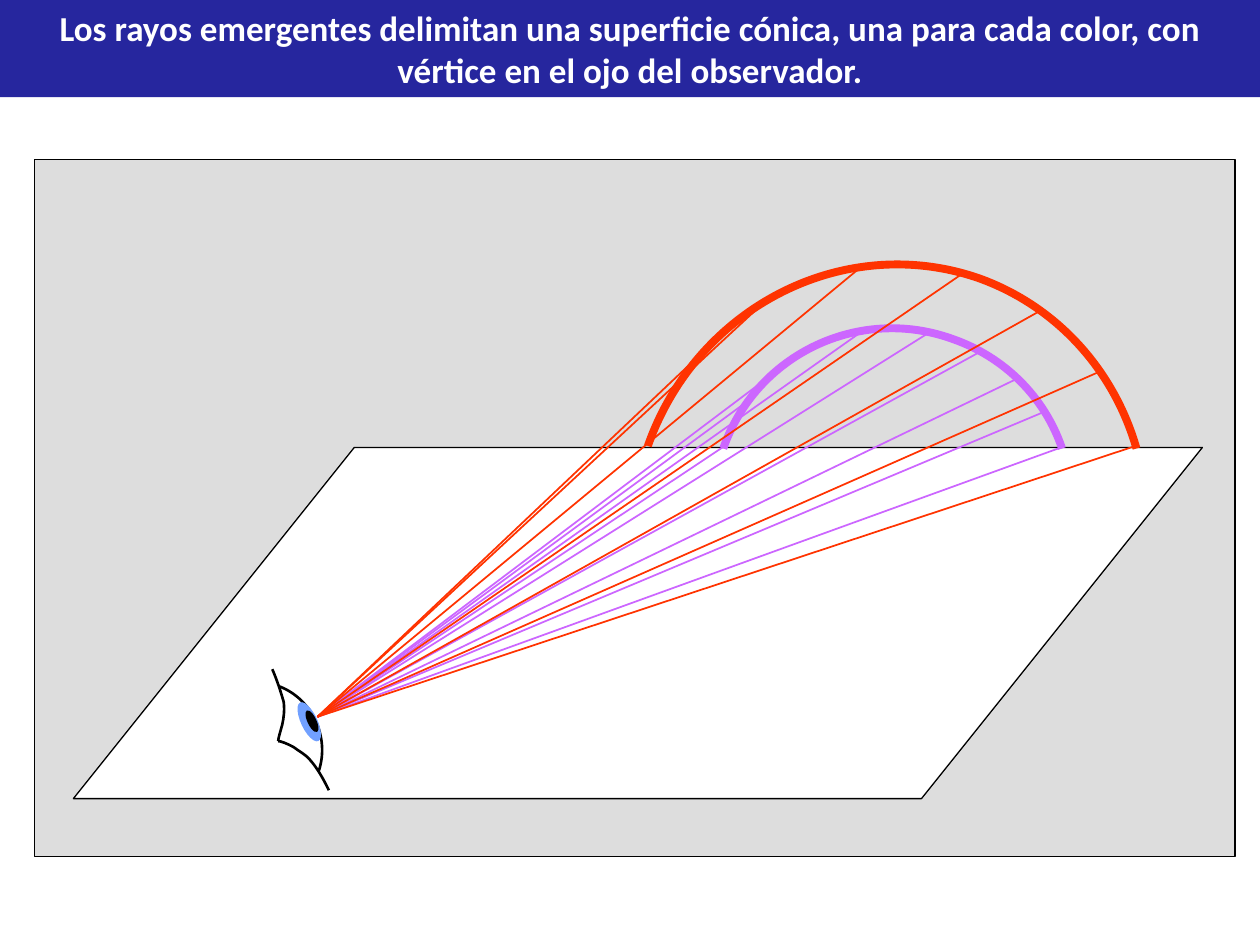
from math import cos, radians, sin

from lxml.etree import SubElement
from pptx import Presentation
from pptx.dml.color import RGBColor
from pptx.enum.shapes import MSO_CONNECTOR, MSO_SHAPE
from pptx.enum.text import MSO_ANCHOR, MSO_AUTO_SIZE, PP_ALIGN
from pptx.oxml.ns import qn
from pptx.util import Cm, Pt

NAVY = RGBColor(0x26, 0x26, 0x9E)
GREY = RGBColor(0xDD, 0xDD, 0xDD)
WHITE = RGBColor(0xFF, 0xFF, 0xFF)
BLACK = RGBColor(0, 0, 0)
VIOLET = RGBColor(0xCC, 0x66, 0xFF)
RED = RGBColor(0xFF, 0x33, 0x00)
IRIS = RGBColor(0x71, 0xA0, 0xFF)

TITLE = ("Los rayos emergentes delimitan una superficie cónica, una para cada "
         "color, con vértice en el ojo del observador.")

EYE = (6.4, 14.45)
EYE_TILT = 334.7
ARC_TILT = 199.6
VIOLET_ENDS = [(14.61, 8.99), (15.19, 8), (16.08, 7.16), (17.42, 6.65), (18.72, 6.71),
               (19.76, 7.09), (20.47, 7.65), (21.03, 8.31), (21.39, 9.02)]
RED_ENDS = [(14.1, 7.16), (15.57, 5.94), (17.42, 5.33), (19.41, 5.51),
            (20.96, 6.27), (22.17, 7.49), (22.89, 8.99)]
VIOLET_ARC = [(21.41, 9.04), (21.06, 8), (20.24, 7.19), (19.2, 6.83),
              (17.32, 6.15), (15.24, 7.14), (14.58, 9.04)]
RED_ARC = [(22.91, 9.04), (22.45, 7.44), (21.29, 6.17), (19.74, 5.61),
           (17.04, 4.67), (14.05, 6.17), (13.06, 8.99)]
EYE_WHITE = [(5.64, 13.87), (5.9, 13.95), (6.05, 14.05), (6.1, 14.15),
             (5.9, 14.3), (6.1, 14.9), (6.43, 14.94),
             (6.5, 14.8), (6.5, 15.2), (6.43, 15.49),
             (6.2, 15.15), (5.9, 14.98), (5.64, 14.91),
             (5.75, 14.6), (5.78, 14.2), (5.64, 13.87)]
UPPER_LID = [(5.49, 13.49), (5.59, 13.72), (5.66, 13.94), (5.72, 14.15), (5.74, 14.33),
             (5.72, 14.48), (5.69, 14.61), (5.66, 14.73), (5.61, 14.88), (5.61, 14.94)]
CORNEA = [(5.64, 13.84), (6.3, 14.1), (6.65, 14.86), (6.43, 15.54)]
LOWER_LID = [(6.63, 15.93), (6.53, 15.72), (6.4, 15.49), (6.27, 15.34), (6.17, 15.21),
             (6.02, 15.14), (5.92, 15.06), (5.79, 14.99), (5.66, 14.94), (5.61, 14.94)]


def set_all(obj, values):
    for name, value in values.items():
        setattr(obj, name, value)


def place(sp, box):
    set_all(sp, dict(zip(("left", "top", "width", "height"), map(Cm, box))))


def unrotate(point, box, rotation):
    left, top, width, height = box
    cx, cy = left + width / 2, top + height / 2
    dx, dy = point[0] - cx, point[1] - cy
    c, s = cos(radians(rotation)), sin(radians(rotation))
    return Cm(cx + c * dx + s * dy), Cm(cy - s * dx + c * dy)


class Sketch:
    title_font = {"name": "Calibri", "size": Pt(20), "bold": True}
    title_frame = {"word_wrap": True, "auto_size": MSO_AUTO_SIZE.NONE,
                   "vertical_anchor": MSO_ANCHOR.MIDDLE}

    def __init__(self, s):
        self.s = s
        self.shapes = s.shapes

    def start_group(self):
        self.shapes = self.s.shapes.add_group_shape().shapes

    def end_group(self):
        self.shapes = self.s.shapes

    def paint(self, sp, fill=None, line=None, width=0.75):
        sp.shadow.inherit = False
        for fmt, color in ((sp.fill, fill), (sp.line.fill, line)):
            if color is None:
                fmt.background()
            else:
                fmt.solid()
                fmt.fore_color.rgb = color
        if line is not None:
            sp.line.width = Pt(width)

    def title(self, text, box):
        sp = self.s.shapes.title
        place(sp, box)
        self.paint(sp, NAVY)
        tf = sp.text_frame
        set_all(tf, self.title_frame)
        p = tf.paragraphs[0]
        p.alignment = PP_ALIGN.CENTER
        r = p.add_run()
        r.text = text
        set_all(r.font, self.title_font)
        r.font.color.rgb = WHITE

    def shape(self, kind, box, fill, line=None, rotation=0):
        sp = self.shapes.add_shape(kind, *map(Cm, box))
        sp.rotation = rotation
        self.paint(sp, fill, line)
        return sp

    def ray(self, start, end, color):
        cx = self.shapes.add_connector(MSO_CONNECTOR.STRAIGHT, *map(Cm, start + end))
        cx.line.color.rgb = color
        cx.line.width = Pt(1)
        SubElement(cx._element.spPr, qn("a:effectLst"))

    def curve(self, controls, box, rotation, close=False, **paint):
        first, *rest = [unrotate(point, box, rotation) for point in controls]
        builder = self.shapes.build_freeform(*first)
        builder.add_line_segments(rest, close=close)
        sp = builder.convert_to_shape()
        shift = {"x": sp.left - Cm(box[0]), "y": sp.top - Cm(box[1])}
        place(sp, box)
        sp.rotation = rotation
        track = next(sp._element.iter(qn("a:path")))
        for name, size in (("w", sp.width), ("h", sp.height)):
            track.set(name, str(size))
        for pt in track.iter(qn("a:pt")):
            for axis, offset in shift.items():
                pt.set(axis, str(int(pt.get(axis)) + offset))
        lines = track.findall(qn("a:lnTo"))
        for i in range(0, len(lines), 3):
            bezier = lines[i].makeelement(qn("a:cubicBezTo"))
            lines[i].addprevious(bezier)
            for line in lines[i:i + 3]:
                bezier.append(line[0])
                track.remove(line)
        self.paint(sp, **paint)

    def cone(self, ends, arc, box, color):
        self.start_group()
        for end in ends:
            self.ray(EYE, end, color)
        self.end_group()
        self.curve(arc, box, ARC_TILT, line=color, width=4.5)

    def eye(self):
        stroke = {"line": BLACK, "width": 1.5}
        self.start_group()
        self.curve(EYE_WHITE, (5.05, 14.33, 1.83, 0.81), 64.7, close=True, fill=WHITE)
        self.curve(UPPER_LID, (5.28, 13.54, 0.51, 1.35), EYE_TILT, **stroke)
        self.curve(CORNEA, (5.36, 14.02, 1.32, 1.35), 20.5, **stroke)
        self.shape(MSO_SHAPE.OVAL, (6.07, 14.12, 0.33, 0.86), IRIS, rotation=EYE_TILT)
        self.shape(MSO_SHAPE.OVAL, (6.2, 14.3, 0.18, 0.48), BLACK, rotation=EYE_TILT)
        self.curve(LOWER_LID, (5.87, 14.76, 0.51, 1.35), EYE_TILT, **stroke)
        self.end_group()


def main():
    prs = Presentation()
    set_all(prs, {"slide_width": Cm(25.4), "slide_height": Cm(19.05)})
    sketch = Sketch(prs.slides.add_slide(prs.slide_layouts[5]))
    sketch.title(TITLE, (0, 0, 25.4, 1.96))
    sketch.shape(MSO_SHAPE.RECTANGLE, (0.69, 3.22, 24.21, 14.05), GREY, BLACK)
    ground = sketch.shape(MSO_SHAPE.PARALLELOGRAM, (1.48, 9.02, 22.76, 7.08), WHITE, BLACK)
    ground.adjustments[0] = 0.8
    sketch.cone(VIOLET_ENDS, VIOLET_ARC, (14.99, 6.58, 6.45, 3.63), VIOLET)
    sketch.cone(RED_ENDS, RED_ARC, (13.69, 5.28, 9.32, 5.41), RED)
    sketch.eye()
    prs.save("out.pptx")


if __name__ == "__main__":
    main()
